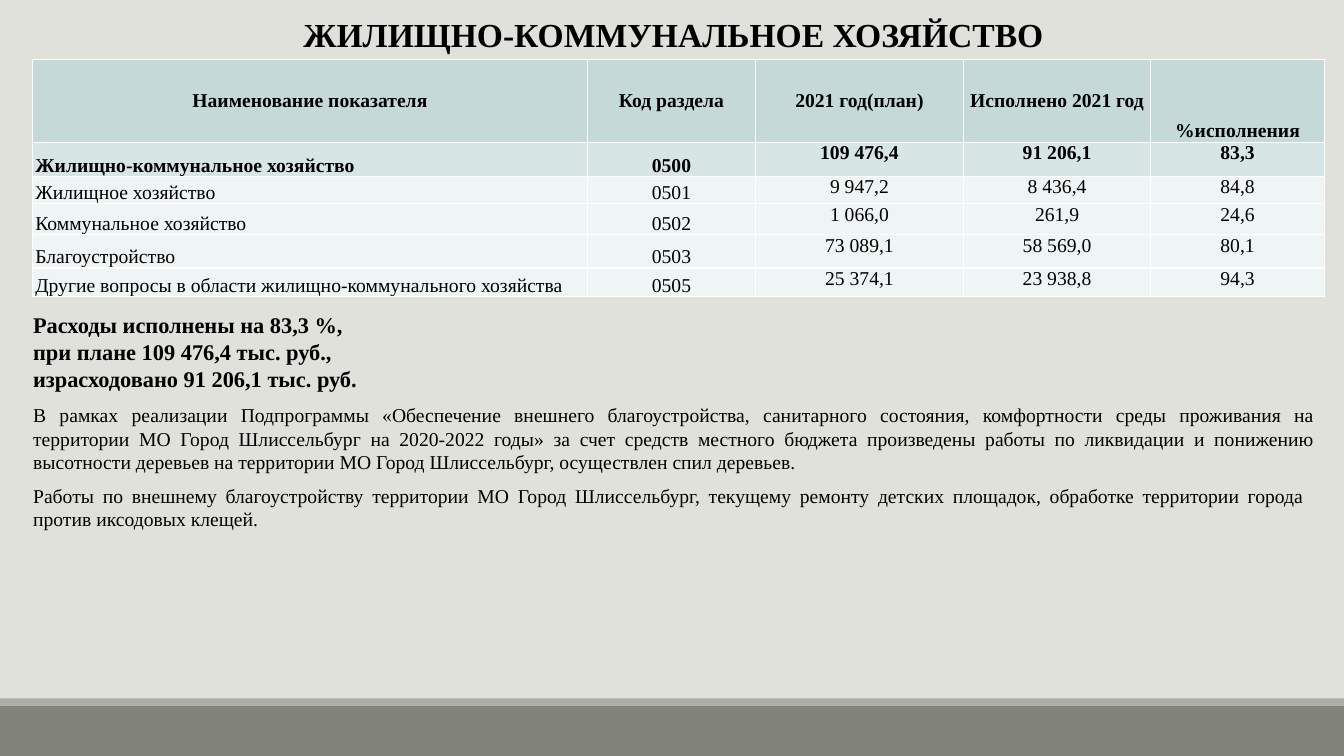
from lxml import etree
from pptx import Presentation
from pptx.dml.color import RGBColor
from pptx.enum.shapes import MSO_SHAPE
from pptx.enum.text import MSO_ANCHOR, PP_ALIGN
from pptx.oxml.ns import qn
from pptx.util import Inches, Pt

LEFT, CENTER, JUSTIFY = PP_ALIGN.LEFT, PP_ALIGN.CENTER, PP_ALIGN.JUSTIFY
TOP, MIDDLE, BOTTOM = MSO_ANCHOR.TOP, MSO_ANCHOR.MIDDLE, MSO_ANCHOR.BOTTOM
RECTANGLE = MSO_SHAPE.RECTANGLE

THEME = {
    "font": "Times New Roman",
    "background": "E1E1DB", "footer": "82847C", "footer_edge": "ACADA8",
    "ink": "000000", "header": "C4D9D8", "total": "D8E5E5", "row": "EFF4F4",
    "border": "FFFFFF",
    "title_size": 24, "summary_size": 16, "body_size": 14,
}
WIDTH, HEIGHT = 13.33, 7.5
MARGIN = 0.23


def color(name):
    return RGBColor.from_string(THEME[name])


def write(frame, text, size="body_size", bold=False, align=LEFT, spacing=None):
    frame.word_wrap = True
    paragraph = frame.paragraphs[0]
    paragraph.alignment = align
    if spacing:
        paragraph.line_spacing = spacing
    run = paragraph.add_run()
    run.text = text
    run.font.name = THEME["font"]
    run.font.size = Pt(THEME[size])
    run.font.bold = bold
    run.font.color.rgb = color("ink")


deck = Presentation()
deck.slide_width, deck.slide_height = Inches(WIDTH), Inches(HEIGHT)
slide = deck.slides.add_slide(deck.slide_layouts[6])
slide.background.fill.solid()
slide.background.fill.fore_color.rgb = color("background")

# Footer bands
for band_top, band_height, band_color in [(7, 0.5, "footer"), (6.93, 0.07, "footer_edge")]:
    band = slide.shapes.add_shape(
        RECTANGLE, 0, Inches(band_top), Inches(WIDTH), Inches(band_height))
    band.shadow.inherit = False
    band.fill.solid()
    band.fill.fore_color.rgb = color(band_color)
    band.line.fill.background()

# Title and commentary
SUMMARY = ("Расходы исполнены на 83,3 %, при плане 109 476,4 тыс. руб., "
           "израсходовано 91 206,1 тыс. руб.")
TREE_WORKS = (
    "В рамках реализации Подпрограммы «Обеспечение внешнего благоустройства, "
    "санитарного состояния, комфортности среды проживания на территории "
    "МО Город Шлиссельбург на 2020-2022 годы» за счет средств местного бюджета "
    "произведены работы по ликвидации и понижению высотности деревьев на территории "
    "МО Город Шлиссельбург, осуществлен спил деревьев.")
OTHER_WORKS = (
    "Работы по внешнему благоустройству территории МО Город Шлиссельбург, "
    "текущему ремонту детских площадок, обработке территории города "
    "против иксодовых клещей.")
TEXTS = [
    ((1.29, 0.09, 10.78, 0.5), "ЖИЛИЩНО-КОММУНАЛЬНОЕ ХОЗЯЙСТВО",
     {"size": "title_size", "bold": True, "align": CENTER}),
    ((MARGIN, 3.04, 3.67, 0.91), SUMMARY, {"size": "summary_size", "bold": True}),
    ((MARGIN, 3.95, 12.91, 0.81), TREE_WORKS, {"align": JUSTIFY}),
    ((MARGIN, 4.75, 12.81, 0.57), OTHER_WORKS, {"align": JUSTIFY}),
]
for place, text, style in TEXTS:
    box = slide.shapes.add_textbox(*map(Inches, place))
    write(box.text_frame, text, **style)

# Budget table
BUDGET = [
    ["Наименование показателя", "Код раздела", "2021 год(план)",
     "Исполнено 2021 год", "%исполнения"],
    ["Жилищно-коммунальное хозяйство", "0500", "109 476,4", "91 206,1", "83,3"],
    ["Жилищное хозяйство", "0501", "9 947,2", "8 436,4", "84,8"],
    ["Коммунальное хозяйство", "0502", "1 066,0", "261,9", "24,6"],
    ["Благоустройство", "0503", "73 089,1", "58 569,0", "80,1"],
    ["Другие вопросы в области жилищно-коммунального хозяйства", "0505",
     "25 374,1", "23 938,8", "94,3"],
]
COLUMNS = [5.51, 1.66, 2.07, 1.85, 1.73]
ROWS = [0.82, 0.34, 0.27, 0.31, 0.33, 0.28]
budget = slide.shapes.add_table(
    len(ROWS), len(COLUMNS), Inches(0.32), Inches(0.59),
    Inches(sum(COLUMNS)), Inches(sum(ROWS))).table
for column, column_width in zip(budget.columns, COLUMNS):
    column.width = Inches(column_width)

for r, (row_height, values) in enumerate(zip(ROWS, BUDGET)):
    budget.rows[r].height = Inches(row_height)
    for c, value in enumerate(values):
        cell = budget.cell(r, c)
        cell.margin_left = cell.margin_right = Inches(0.03)
        cell.margin_top = cell.margin_bottom = 0
        percent_header = r == 0 and c == len(COLUMNS) - 1
        if r == 0:
            cell.vertical_anchor = BOTTOM if percent_header else MIDDLE
        else:
            cell.vertical_anchor = BOTTOM if c < 2 else TOP
        write(cell.text_frame, value, bold=r < 2,
              align=LEFT if r and c == 0 else CENTER,
              spacing=2.5 if percent_header else None)
        # Borders go before the fill in the cell properties
        properties = cell._tc.get_or_add_tcPr()
        for side in ("a:lnL", "a:lnR", "a:lnT", "a:lnB"):
            border = etree.SubElement(properties, qn(side), w=str(Pt(1)))
            border_fill = etree.SubElement(border, qn("a:solidFill"))
            etree.SubElement(border_fill, qn("a:srgbClr"), val=THEME["border"])
        cell.fill.solid()
        cell.fill.fore_color.rgb = color(("header", "total", "row")[min(r, 2)])

deck.save("out.pptx")
